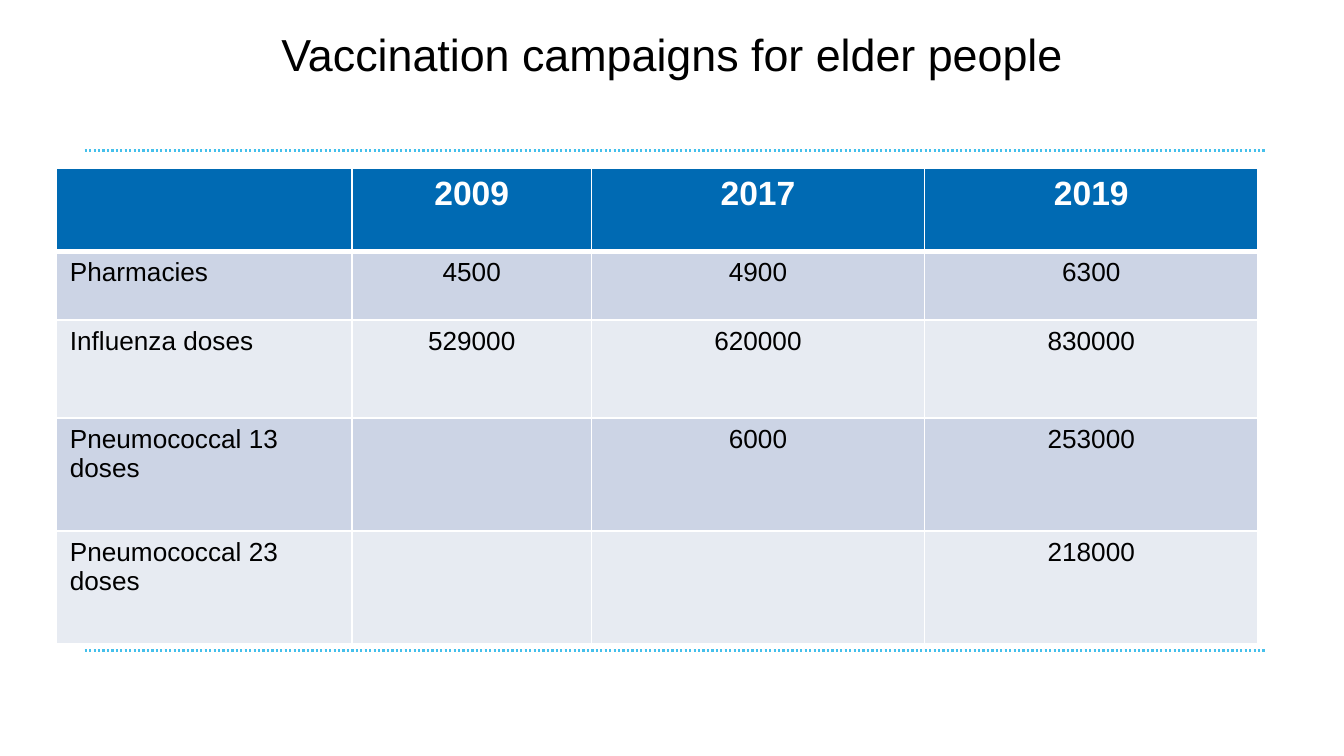
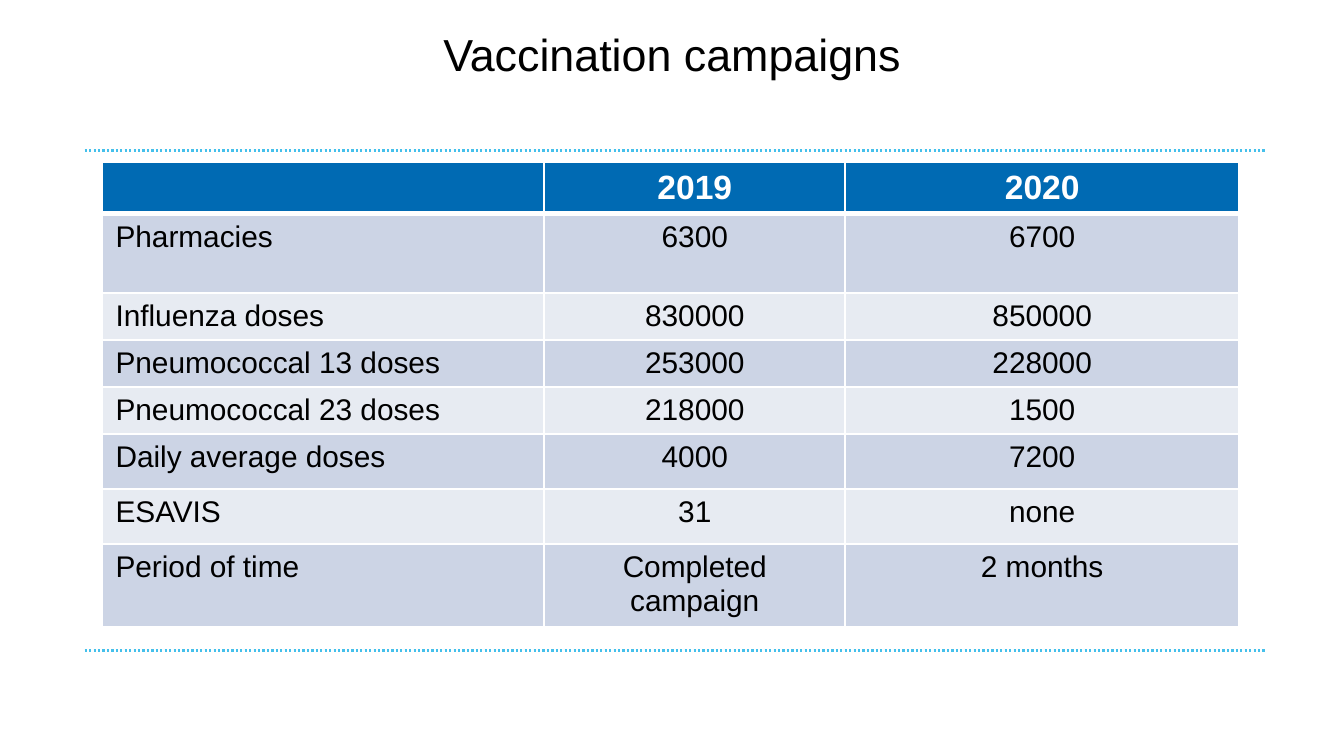
from dataclasses import dataclass

from lxml import etree
from pptx import Presentation
from pptx.dml.color import RGBColor
from pptx.enum import dml, shapes, text
from pptx.oxml import ns
from pptx.slide import Slide
from pptx.table import _Cell as Cell
from pptx.text.text import TextFrame
from pptx.util import Inches, Pt

FONT = "Arial"
BLACK = RGBColor(0x00, 0x00, 0x00)
WHITE = RGBColor(0xFF, 0xFF, 0xFF)
BLUE = RGBColor(0x00, 0x6A, 0xB3)
CYAN = RGBColor(0x45, 0xC0, 0xEB)
BANDS = (RGBColor(0xE7, 0xEB, 0xF2), RGBColor(0xCC, 0xD4, 0xE5))
LEFT = text.PP_ALIGN.LEFT
CENTER = text.PP_ALIGN.CENTER
RULES = (1.12, 4.84)


@dataclass(frozen=True)
class Grid:
    title: str
    left: float
    top: float
    cols: tuple[float, ...]
    rows: tuple[float, ...]
    size: int
    data: tuple[tuple[str, ...], ...]


GRIDS = (
    Grid(
        "Vaccination campaigns for elder people",
        0.42, 1.25,
        (2.2, 1.78, 2.48, 2.48),
        (0.62, 0.51, 0.73, 0.84, 0.84),
        14,
        (
            ("", "2009", "2017", "2019"),
            ("Pharmacies", "4500", "4900", "6300"),
            ("Influenza doses", "529000", "620000", "830000"),
            ("Pneumococcal 13 doses", "", "6000", "253000"),
            ("Pneumococcal 23 doses", "", "", "218000"),
        ),
    ),
    Grid(
        "Vaccination campaigns",
        0.76, 1.21,
        (3.29, 2.24, 2.93),
        (0.38, 0.59, 0.35, 0.35, 0.35, 0.41, 0.41, 0.6),
        16,
        (
            ("", "2019", "2020"),
            ("Pharmacies", "6300", "6700"),
            ("Influenza doses", "830000", "850000"),
            ("Pneumococcal 13 doses", "253000", "228000"),
            ("Pneumococcal 23 doses", "218000", "1500"),
            ("Daily average doses", "4000", "7200"),
            ("ESAVIS", "31", "none"),
            ("Period of time", "Completed campaign", "2 months"),
        ),
    ),
)


def write(frame: TextFrame, words: str, *, size: int, color: RGBColor = BLACK,
          bold: bool = False, align: text.PP_ALIGN = CENTER,
          lead: float | None = None) -> None:
    frame.word_wrap = True
    para = frame.paragraphs[0]
    para.alignment = align
    if lead:
        para.line_spacing = Pt(lead)
    para.font.size = Pt(size)
    if words:
        run = para.add_run()
        run.text = words
        font = run.font
        font.name, font.size, font.bold = FONT, Pt(size), bold
        font.color.rgb = color


def draw_title(slide: Slide, words: str) -> None:
    box = slide.shapes.add_textbox(Inches(0.63), Inches(0.24), Inches(8.74), Inches(0.35))
    frame = box.text_frame
    frame.margin_left = frame.margin_right = frame.margin_top = frame.margin_bottom = 0
    frame.vertical_anchor = text.MSO_ANCHOR.MIDDLE
    write(frame, words, size=24, lead=26)


def draw_rule(slide: Slide, top: float) -> None:
    rule = slide.shapes.add_connector(
        shapes.MSO_CONNECTOR.STRAIGHT, Inches(0.63), Inches(top), Inches(9.41), Inches(top))
    rule.line.color.rgb = CYAN
    rule.line.width = Pt(1.2)
    rule.line.dash_style = dml.MSO_LINE.ROUND_DOT
    etree.SubElement(rule._element.spPr, ns.qn("a:effectLst"))


def edge(cell: Cell, row: int) -> None:
    props = cell._tc.get_or_add_tcPr()
    wide = {(0, "B"), (1, "T")}
    for side in "LRTB":
        width = Pt(3 if (row, side) in wide else 1)
        line = etree.SubElement(props, ns.qn(f"a:ln{side}"), w=str(width))
        fill = etree.SubElement(line, ns.qn("a:solidFill"))
        etree.SubElement(fill, ns.qn("a:srgbClr"), val=str(WHITE))


def draw_grid(slide: Slide, grid: Grid) -> None:
    table = slide.shapes.add_table(
        len(grid.rows), len(grid.cols), Inches(grid.left), Inches(grid.top),
        Inches(sum(grid.cols)), Inches(sum(grid.rows))).table
    for col, width in zip(table.columns, grid.cols):
        col.width = Inches(width)
    for row, height in zip(table.rows, grid.rows):
        row.height = Inches(height)
    for i, items in enumerate(grid.data):
        head = i == 0
        for j, words in enumerate(items):
            cell = table.cell(i, j)
            edge(cell, i)
            cell.margin_top, cell.margin_bottom = Inches(0.05), Inches(0.03)
            cell.fill.solid()
            cell.fill.fore_color.rgb = BLUE if head else BANDS[i % 2]
            write(cell.text_frame, words, size=18 if head else grid.size,
                  color=WHITE if head else BLACK, bold=head,
                  align=CENTER if head or j else LEFT)


def main() -> None:
    deck = Presentation()
    deck.slide_width = Inches(10)
    deck.slide_height = deck.slide_width * 9 // 16
    for grid in GRIDS:
        slide = deck.slides.add_slide(deck.slide_layouts[6])
        for top in RULES:
            draw_rule(slide, top)
        draw_title(slide, grid.title)
        draw_grid(slide, grid)
    deck.save("out.pptx")


if __name__ == "__main__":
    main()
